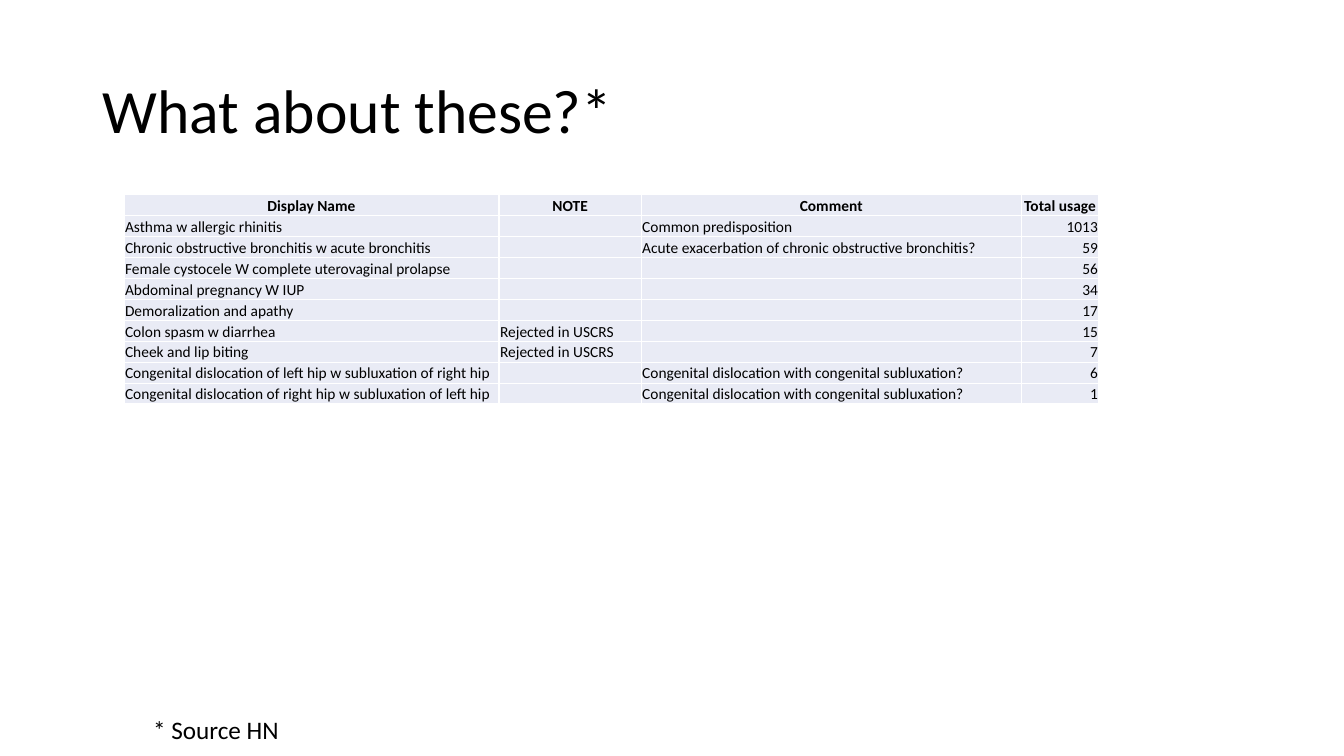
from pptx import Presentation
from pptx.dml.color import RGBColor
from pptx.enum.text import MSO_ANCHOR, MSO_AUTO_SIZE, PP_ALIGN
from pptx.util import Inches, Pt


def set_values(target, values):
    for name, value in values.items():
        setattr(target, name, value)


def format_text(paragraph, size, color="000000", bold=False):
    for run in paragraph.runs:
        set_values(run.font, {"name": "Calibri", "size": Pt(size), "bold": bold})
        run.font.color.rgb = RGBColor.from_string(color)


presentation = Presentation()
set_values(presentation, {"slide_width": Inches(13.33), "slide_height": Inches(7.5)})
slide = presentation.slides.add_slide(presentation.slide_layouts[5])

title = slide.shapes.title
set_values(title, {"left": Inches(0.92), "top": Inches(0.4),
                   "width": Inches(11.5), "height": Inches(1.45)})
title.text_frame.text = "What about these?*"
title.text_frame.vertical_anchor = MSO_ANCHOR.MIDDLE
title_paragraph = title.text_frame.paragraphs[0]
set_values(title_paragraph, {"alignment": PP_ALIGN.LEFT, "line_spacing": 0.9})
format_text(title_paragraph, 44)

usage_rows = [
    ("Display Name", "NOTE", "Comment", "Total usage"),
    ("Asthma w allergic rhinitis", "", "Common predisposition", "1013"),
    ("Chronic obstructive bronchitis w acute bronchitis", "",
     "Acute exacerbation of chronic obstructive bronchitis?", "59"),
    ("Female cystocele W complete uterovaginal prolapse", "", "", "56"),
    ("Abdominal pregnancy W IUP", "", "", "34"),
    ("Demoralization and apathy", "", "", "17"),
    ("Colon spasm w diarrhea", "Rejected in USCRS", "", "15"),
    ("Cheek and lip biting", "Rejected in USCRS", "", "7"),
    ("Congenital dislocation of left hip w subluxation of right hip", "",
     "Congenital dislocation with congenital subluxation?", "6"),
    ("Congenital dislocation of right hip w subluxation of left hip", "",
     "Congenital dislocation with congenital subluxation?", "1"),
]
column_widths = [3.72, 1.41, 3.77, 0.77]
column_alignments = [PP_ALIGN.LEFT, PP_ALIGN.LEFT, PP_ALIGN.LEFT, PP_ALIGN.RIGHT]
cell_format = {
    "vertical_anchor": MSO_ANCHOR.BOTTOM,
    "margin_left": Inches(0.01),
    "margin_right": Inches(0.01),
    "margin_top": Inches(0.01),
    "margin_bottom": 0,
}

table = slide.shapes.add_table(
    len(usage_rows), len(column_widths),
    Inches(1.23), Inches(1.93), Inches(9.67), Inches(2.08)).table
set_values(table, {"first_row": False, "horz_banding": False})
for column, width in zip(table.columns, column_widths):
    column.width = Inches(width)

for row_index, texts in enumerate(usage_rows):
    is_header = row_index == 0
    table.rows[row_index].height = Inches(2.08 / len(usage_rows))
    for column_index, text in enumerate(texts):
        cell = table.cell(row_index, column_index)
        set_values(cell, cell_format)
        cell.fill.solid()
        cell.fill.fore_color.rgb = RGBColor.from_string("E9EBF5")
        paragraph = cell.text_frame.paragraphs[0]
        if text:
            paragraph.text = text
            paragraph.alignment = PP_ALIGN.CENTER if is_header else column_alignments[column_index]
            format_text(paragraph, 11, bold=is_header)
        else:
            paragraph._p.get_or_add_endParaRPr().set("sz", "1100")

source_note = slide.shapes.add_textbox(Inches(1.42), Inches(7.04), Inches(1.6), Inches(0.4))
set_values(source_note.text_frame, {"text": "* Source HN", "word_wrap": True,
                                    "auto_size": MSO_AUTO_SIZE.SHAPE_TO_FIT_TEXT})
format_text(source_note.text_frame.paragraphs[0], 18)

presentation.save("out.pptx")
